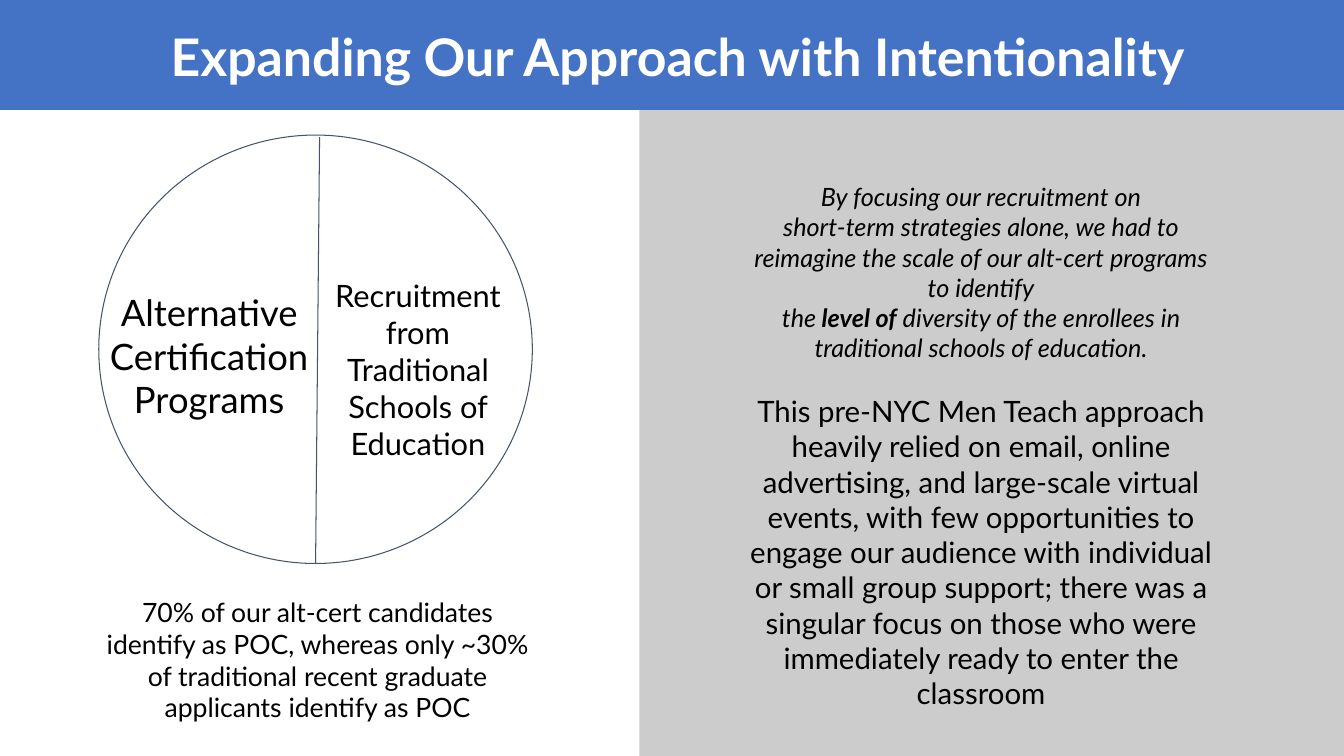
from lxml import etree
from pptx import Presentation
from pptx.dml.color import RGBColor
from pptx.enum.shapes import MSO_CONNECTOR, MSO_SHAPE
from pptx.enum.text import MSO_ANCHOR, PP_ALIGN
from pptx.oxml.ns import qn
from pptx.util import Inches, Pt

RECTANGLE = MSO_SHAPE.RECTANGLE
OVAL = MSO_SHAPE.OVAL
STRAIGHT = MSO_CONNECTOR.STRAIGHT
TOP = MSO_ANCHOR.TOP
MIDDLE = MSO_ANCHOR.MIDDLE
CENTER = PP_ALIGN.CENTER

COLORS = {
    "banner": "4472C4",
    "panel": "CCCCCC",
    "outline": "44546A",
    "white": "FFFFFF",
    "black": "000000",
}
FONT = "Lato"


def color(name):
    return RGBColor.from_string(COLORS[name])


def set_outline(line):
    line.color.rgb = color("outline")
    line.width = Pt(0.75)


def add_area(page, preset, bounds, fill, outlined=False):
    area = page.shapes.add_shape(preset, *map(Inches, bounds))
    area.shadow.inherit = False
    area.fill.solid()
    area.fill.fore_color.rgb = color(fill)
    if outlined:
        set_outline(area.line)
    else:
        area.line.fill.background()


def add_divider(page, start, end):
    divider = page.shapes.add_connector(STRAIGHT, *map(Inches, start + end))
    set_outline(divider.line)
    etree.SubElement(divider._element.spPr, qn("a:effectLst"))


def add_span(para, text, size, ink="black", **styles):
    span = para.add_run()
    span.text = text
    formats = {"name": FONT, "size": Pt(size), **styles}
    for name, value in formats.items():
        setattr(span.font, name, value)
    span.font.color.rgb = color(ink)


def add_box(page, bounds, inset=0.05, anchor=TOP):
    frame = page.shapes.add_textbox(*map(Inches, bounds)).text_frame
    formats = {
        "word_wrap": True,
        "vertical_anchor": anchor,
        "margin_left": Inches(0.1),
        "margin_right": Inches(0.1),
        "margin_top": Inches(inset),
        "margin_bottom": Inches(inset),
    }
    for name, value in formats.items():
        setattr(frame, name, value)
    frame.paragraphs[0].alignment = CENTER
    return frame


def add_label(page, bounds, text, size, inset=0.05):
    frame = add_box(page, bounds, inset)
    add_span(frame.paragraphs[0], text, size)


def add_title(page, text):
    para = add_box(page, (1.59, 0.01, 10.26, 1.17), anchor=MIDDLE).paragraphs[0]
    para.line_spacing = 0.9
    add_span(para, text, 37, "white", bold=True)


def add_approach(page):
    frame = add_box(page, (7.32, 1.75, 4.82, 5.69))
    findings = [
        [("By focusing our recruitment on", False)],
        [("short-term strategies alone, we had to reimagine the scale of our "
          "alt-cert programs to identify", False)],
        [("the", False), (" level of", True),
         (" diversity of the enrollees in traditional schools of education.", False)],
    ]
    for index, spans in enumerate(findings):
        para = frame.add_paragraph() if index else frame.paragraphs[0]
        para.alignment = CENTER
        for text, bold in spans:
            add_span(para, text, 18, italic=True, bold=bold)
    para = frame.add_paragraph()
    para.alignment = CENTER
    para.space_before = Pt(21.6)
    add_span(
        para,
        "This pre-NYC Men Teach approach heavily relied on email, online "
        "advertising, and large-scale virtual events, with few opportunities to "
        "engage our audience with individual or small group support; there was a "
        "singular focus on those who were immediately ready to enter the classroom",
        21,
    )


def main():
    deck = Presentation()
    deck.slide_width = Inches(13.33)
    deck.slide_height = Inches(7.5)
    page = deck.slides.add_slide(deck.slide_layouts[6])

    add_area(page, RECTANGLE, (6.34, 0, 6.99, 7.5), "panel")
    add_approach(page)
    add_label(
        page, (0.93, 5.86, 4.44, 1.38),
        "70% of our alt-cert candidates identify as POC, whereas only ~30% "
        "of traditional recent graduate applicants identify as POC",
        19,
    )
    add_area(page, OVAL, (0.98, 1.34, 4.3, 4.25), "white", outlined=True)
    add_divider(page, (3.17, 1.36), (3.13, 5.59))
    add_label(page, (0.98, 2.78, 2.19, 1.52),
              "Alternative Certification Programs", 26, inset=0.1)
    add_label(page, (3.05, 2.65, 2.19, 2.05),
              "Recruitment from Traditional Schools of Education", 22, inset=0.1)
    add_area(page, RECTANGLE, (0, 0, 13.33, 1.09), "banner")
    add_title(page, "Expanding Our Approach with Intentionality")

    deck.save("out.pptx")


if __name__ == "__main__":
    main()
